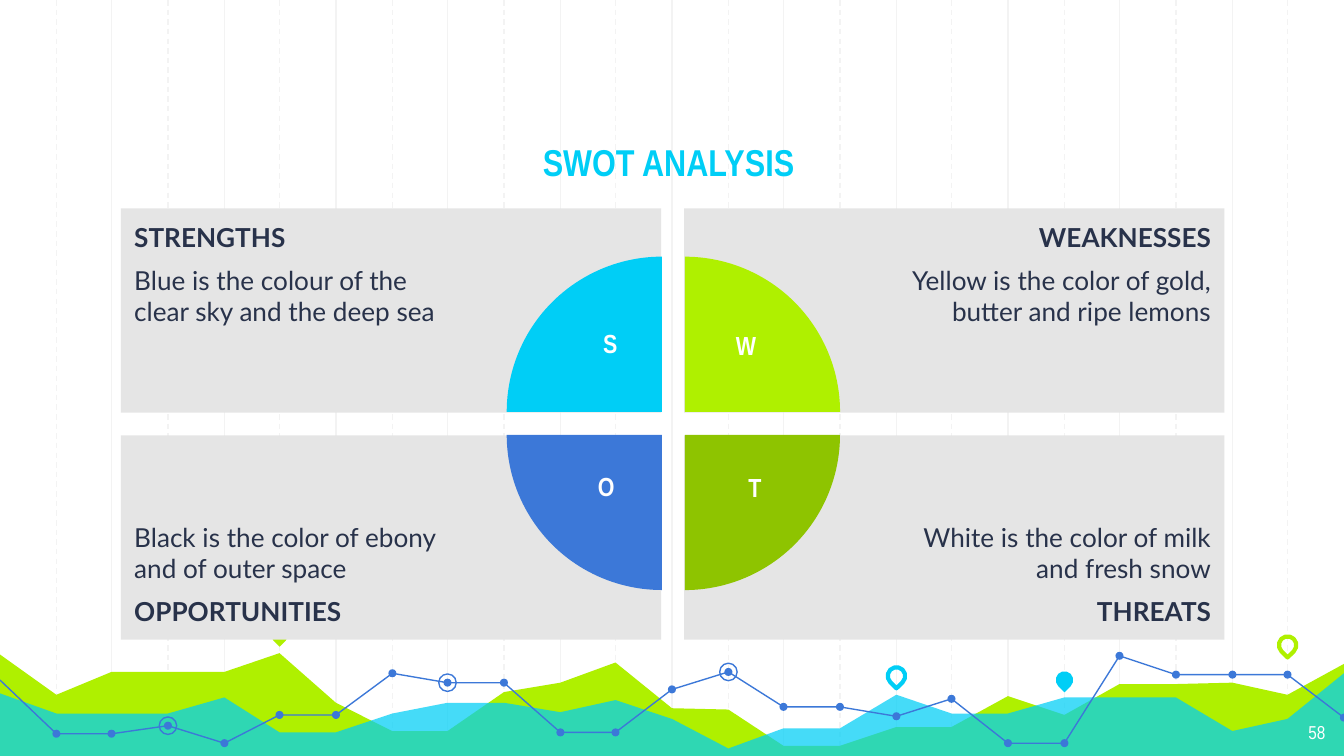
from collections import namedtuple

from lxml.etree import SubElement
from pptx import Presentation
from pptx.dml.color import RGBColor
from pptx.enum.dml import MSO_LINE_DASH_STYLE as Dash
from pptx.enum.shapes import MSO_CONNECTOR_TYPE as Connector, MSO_SHAPE as Shape
from pptx.enum.text import MSO_ANCHOR as Anchor, PP_ALIGN as Align
from pptx.oxml.ns import qn
from pptx.util import Emu, Pt

Box = namedtuple("Box", "left top width height")

SCALE = 9144
COLUMNS = 24
CYAN, LIME, GREEN, BLUE = "00CEF6", "AFF000", "8EC400", "3C78D8"
WHITE, GRID, PANEL, INK = "FFFFFF", "F3F3F3", "E5E5E5", "28324A"
NARROW, BODY = "Arial Narrow", "Lato"

LIME_HILLS = [22, 52, 35, 35, 35, 21, 58, 79, 79, 50, 43, 28, 62,
              63, 90, 90, 76, 76, 53, 67, 44, 44, 43, 52, 29]
CYAN_HILLS = [51, 66, 66, 66, 54, 80, 80, 66, 58, 58, 65, 56, 70,
              92, 77, 77, 52, 66, 66, 54, 54, 54, 79, 70, 36]
TREND = [41, 81, 81, 75, 88, 67, 67, 36, 43, 43, 80, 80, 48,
         35, 61, 61, 68, 55, 88, 88, 23, 37, 37, 37, 69]
RINGED_COLUMNS = [3, 8, 13]
PINS = [(5, 7, LIME, True), (16, 38, CYAN, False),
        (19, 41, CYAN, True), (23, 15, LIME, False)]

QUADRANTS = [
    (0, 0, "STRENGTHS", "Blue is the colour of the clear sky and the deep sea"),
    (1, 0, "WEAKNESSES", "Yellow is the color of gold, butter and ripe lemons"),
    (0, 1, "OPPORTUNITIES", "Black is the color of ebony and of outer space"),
    (1, 1, "THREATS", "White is the color of milk and fresh snow"),
]
WEDGES = [(0, 0, 0, CYAN), (1, 0, 90, LIME), (1, 1, 180, GREEN), (0, 1, 270, BLUE)]
LETTERS = [("S", Box(349, 84, 26, 49)), ("W", Box(446, 85, 38, 48)),
           ("O", Box(345, 190, 29, 49)), ("T", Box(457, 191, 25, 48))]


def px(value):
    """Turn px into EMU."""
    return Emu(round(value * SCALE))


def rgb(code):
    """Turn a hex string into a colour."""
    return RGBColor.from_string(code)


def apply(target, values):
    """Set each named value on the target."""
    for name, value in values.items():
        setattr(target, name, value)


def inside(box, left, top, width, height):
    """Give a box placed relative to another one."""
    return Box(box.left + left, box.top + top, width, height)


def column_x(box, column):
    """Give the offset of a grid column."""
    return round(box.width * column / COLUMNS)


def paint(shape, fill=None, line=None, weight=0.75):
    """Set fill and outline and drop the shadow."""
    shape.shadow.inherit = False
    if fill:
        shape.fill.solid()
        shape.fill.fore_color.rgb = rgb(fill)
    else:
        shape.fill.background()
    if line:
        shape.line.color.rgb = rgb(line)
        shape.line.width = Pt(weight)
    else:
        shape.line.fill.background()
    return shape


def add_preset(page, kind, box, rotation=0, **look):
    """Add a painted preset shape."""
    shape = page.shapes.add_shape(kind, *map(px, box))
    shape.rotation = rotation
    return paint(shape, **look)


def add_dot(page, kind, box, x, y, size, rotation=0, **look):
    """Add a small shape centred on a point of the box."""
    place = inside(box, x - size / 2, y - size / 2, size, size)
    return add_preset(page, kind, place, rotation, **look)


def add_path(page, box, points, close, **look):
    """Add a freeform through points of the box."""
    builder = page.shapes.build_freeform(*points[0], scale=SCALE)
    builder.add_line_segments(points[1:], close=close)
    return paint(builder.convert_to_shape(px(box.left), px(box.top)), **look)


def write(frame, paragraphs, insets, anchor=Anchor.TOP, wrap=True):
    """Write (text, layout, font values, colour) paragraphs into a frame."""
    sides = ("margin_left", "margin_top", "margin_right", "margin_bottom")
    apply(frame, dict(zip(sides, map(px, insets))))
    apply(frame, {"word_wrap": wrap, "vertical_anchor": anchor})
    for index, (text, layout, font, color) in enumerate(paragraphs):
        para = frame.add_paragraph() if index else frame.paragraphs[0]
        apply(para, layout)
        span = para.add_run()
        span.text = text
        apply(span.font, font)
        span.font.color.rgb = rgb(color)


def add_label(page, box, text, size, color, align, bold=True,
              insets=(10, 10, 10, 10), **frame_values):
    """Add a one-line text box in the narrow font."""
    label = page.shapes.add_textbox(*map(px, box))
    font = {"name": NARROW, "size": Pt(size), "bold": bold}
    write(label.text_frame, [(text, {"alignment": align}, font, color)],
          insets, **frame_values)


def draw_grid(page, box):
    """Draw vertical rules, dashed on odd columns."""
    for column in range(1, COLUMNS):
        x = px(box.left + column_x(box, column))
        rule = page.shapes.add_connector(
            Connector.STRAIGHT, x, px(box.top), x, px(box.top + box.height))
        rule.line.color.rgb = rgb(GRID)
        rule.line.width = Pt(0.75)
        if column % 2:
            rule.line.dash_style = Dash.DASH
        SubElement(rule._element.spPr, qn("a:effectLst"))


def draw_landscape(page, box):
    """Draw the hills, pins and trend line along the foot."""
    def along(heights):
        return [(column_x(box, column), y) for column, y in enumerate(heights)]

    base = [(box.width, box.height), (0, box.height)]
    add_path(page, box, along(LIME_HILLS) + base, True, fill=LIME)
    water = add_path(page, box, along(CYAN_HILLS) + base, True, fill=CYAN)
    tint = water._element.spPr.find(qn("a:solidFill"))[0]
    SubElement(tint, qn("a:alpha"), val="73000")

    for column, y, color, solid in PINS:
        look = {"fill": color} if solid else {"line": color, "weight": 2.25}
        add_dot(page, Shape.TEAR, box, column_x(box, column), y, 13, 135, **look)

    trend = along(TREND)
    add_path(page, box, trend, False, line=BLUE)
    for x, y in trend[1:]:
        add_dot(page, Shape.OVAL, box, x, y, 6, fill=BLUE)
    for column in RINGED_COLUMNS:
        add_dot(page, Shape.OVAL, box, *trend[column], 13, line=BLUE)


def draw_quadrant(page, box, on_right, at_bottom, heading, text):
    """Draw one panel with its heading on the outer edge."""
    panel = add_preset(page, Shape.RECTANGLE, box, fill=PANEL)
    align = Align.RIGHT if on_right else Align.LEFT
    font = {"name": BODY, "size": Pt(14)}
    lines = [(heading, True), (text, False)]
    if at_bottom:
        lines.reverse()
    layouts = [{"alignment": align},
               {"alignment": align, "space_before": Pt(6), "space_after": Pt(6)}]
    paragraphs = [(words, layout, {**font, "bold": bold}, INK)
                  for (words, bold), layout in zip(lines, layouts)]
    insets = (150, 10, 10, 10) if on_right else (10, 10, 150, 10)
    write(panel.text_frame, paragraphs, insets,
          Anchor.BOTTOM if at_bottom else Anchor.TOP)


def draw_swot(page, box, gap=17):
    """Draw four panels around a quartered disc."""
    width, height = (box.width - gap) // 2, (box.height - gap) // 2
    for column, row, heading, text in QUADRANTS:
        place = inside(box, column * (width + gap), row * (height + gap), width, height)
        draw_quadrant(page, place, column, row, heading, text)
    for column, row, rotation, color in WEDGES:
        place = inside(box, 287 + column * gap, 36 + row * gap, 231, 231)
        wedge = add_preset(page, Shape.PIE, place, rotation, fill=color)
        wedge.adjustments[0], wedge.adjustments[1] = 108, 162
    for letter, place in LETTERS:
        add_label(page, inside(box, *place), letter, 14, WHITE, Align.CENTER,
                  insets=(10, 5, 10, 5), wrap=False)


def main():
    """Build and save the deck."""
    deck = Presentation()
    width = px(1000)
    apply(deck, {"slide_width": width, "slide_height": Emu(width * 9 // 16)})
    page = deck.slides.add_slide(deck.slide_layouts[6])
    draw_grid(page, Box(0, 0, 1000, 565))
    draw_landscape(page, Box(0, 465, 1000, 99))
    add_label(page, Box(115, 69, 765, 78), "SWOT ANALYSIS", 20, CYAN,
              Align.CENTER, anchor=Anchor.BOTTOM)
    add_label(page, Box(936, 528, 60, 35), "58", 10, WHITE, Align.RIGHT, bold=False)
    draw_swot(page, Box(90, 155, 821, 321))
    deck.save("out.pptx")


if __name__ == "__main__":
    main()
